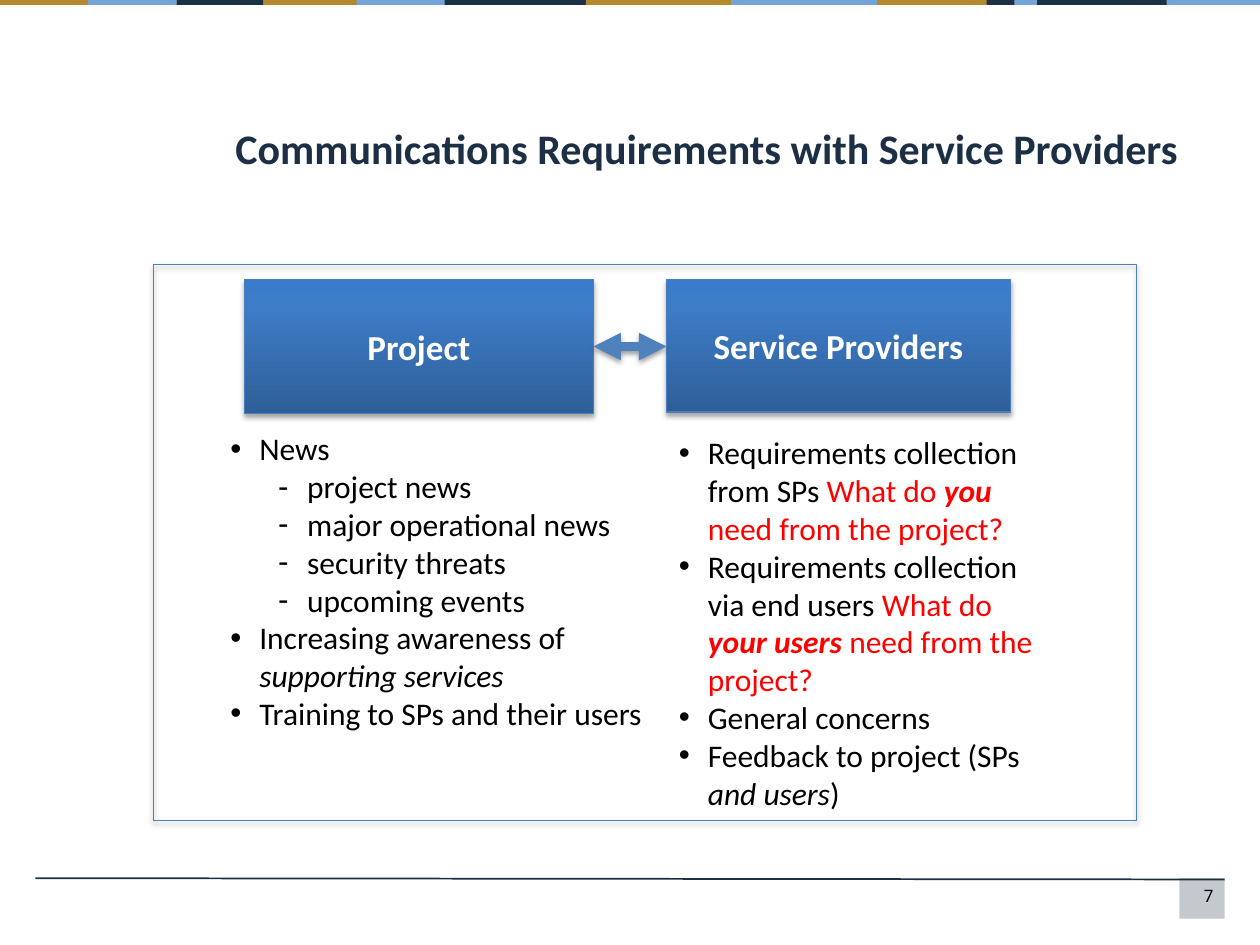
"""Build the slide on communications requirements with service providers."""
import copy
from dataclasses import dataclass
from typing import Optional

import pptx
import pptx.dml.color
import pptx.enum.shapes
import pptx.enum.text
import pptx.oxml
import pptx.oxml.ns
import pptx.util
from pptx.dml.color import RGBColor
from pptx.util import Inches, Pt

NAVY = RGBColor(0x1C, 0x30, 0x46)
INK = RGBColor(0x1D, 0x2F, 0x45)
GOLD = RGBColor(0xB5, 0x89, 0x2D)
SKY = RGBColor(0x75, 0xA5, 0xD8)
EDGE = RGBColor(0x4B, 0x7E, 0xBC)
ARROW = RGBColor(0x4F, 0x81, 0xBD)
BLACK = RGBColor(0, 0, 0)
WHITE = RGBColor(0xFF, 0xFF, 0xFF)
RED = RGBColor(0xFF, 0, 0)
GRADIENT = [
    (0, RGBColor(0x2F, 0x5F, 0x99)),
    (0.8, RGBColor(0x3D, 0x7C, 0xC7)),
    (1, RGBColor(0x3A, 0x7C, 0xCB)),
]
RECT = pptx.enum.shapes.MSO_SHAPE.RECTANGLE
STRAIGHT = pptx.enum.shapes.MSO_CONNECTOR.STRAIGHT
ALIGN = pptx.enum.text.PP_ALIGN
MIDDLE = pptx.enum.text.MSO_ANCHOR.MIDDLE
BREAK = "\n"


@dataclass
class Box:
    left: float
    top: float
    width: float
    height: float

    def emu(self) -> list:
        return [Inches(v) for v in (self.left, self.top, self.width, self.height)]


@dataclass
class Span:
    text: str
    color: RGBColor = BLACK
    bold: bool = False
    italic: bool = False
    size: float = 18
    font: str = "Calibri"


@dataclass
class Item:
    spans: list
    level: int = 0


STRIPES = [
    (3.41, 1.24, NAVY), (6.5, 3.46, GOLD), (9.19, 0.81, SKY), (2.09, 1.11, GOLD),
    (7.83, 1.43, NAVY), (5.71, 1.25, SKY), (1.4, 0.69, NAVY), (0.7, 0.7, SKY),
    (2.83, 0.7, SKY), (4.65, 1.15, GOLD), (8.05, 0.18, SKY), (0, 0.7, GOLD),
]
PARTIES = [
    ("Project", Box(1.94, 2.22, 2.77, 1.06)),
    ("Service Providers", Box(5.29, 2.22, 2.73, 1.05)),
]
NEWS = ["project news", "major operational news", "security threats", "upcoming events"]
PROVIDER_ITEMS = [
    Item([Span("Requirements collection from SPs "), Span("What do ", RED),
          Span("you", RED, True, True), Span(" need from the project?", RED)]),
    Item([Span("Requirements collection via end users "), Span("What do ", RED),
          Span("your users ", RED, True, True), Span("need from the project?", RED)]),
    Item([Span("General concerns")]),
    Item([Span("Feedback to project (SPs "), Span(BREAK),
          Span("and users", italic=True), Span(")")]),
]
PROJECT_ITEMS = [
    Item([Span("News")]),
    *[Item([Span(text)], 1) for text in NEWS],
    Item([Span("Increasing awareness of "), Span("supporting services", italic=True)]),
    Item([Span("Training to SPs and their users")]),
]


def add_spans(p, spans: list) -> None:
    for span in spans:
        if span.text == BREAK:
            p.add_line_break()
            continue
        r = p.add_run()
        r.text = span.text
        r.font.name = span.font
        r.font.size = Pt(span.size)
        r.font.bold = span.bold
        r.font.italic = span.italic
        r.font.color.rgb = span.color


def add_effects(sp, alpha: int = 0, dist: float = 0) -> None:
    """Replace the theme shadow with a downward one, or with none."""
    shadow = (
        f'<a:outerShdw blurRad="{Pt(3.1)}" dist="{Pt(dist)}" dir="5400000" rotWithShape="0">'
        f'<a:srgbClr val="000000"><a:alpha val="{alpha * 1000}"/></a:srgbClr></a:outerShdw>'
    ) if alpha else ""
    ns = pptx.oxml.ns.nsdecls("a")
    sp._element.spPr.append(
        pptx.oxml.parse_xml(f"<a:effectLst {ns}>{shadow}</a:effectLst>"))


def add_rect(s, box: Box, fill: Optional[RGBColor] = None, outlined: bool = False):
    sp = s.shapes.add_shape(RECT, *box.emu())
    if fill is None:
        sp.fill.background()
    else:
        sp.fill.solid()
        sp.fill.fore_color.rgb = fill
    if outlined:
        sp.line.color.rgb = EDGE
        sp.line.width = Pt(0.75)
        add_effects(sp, 35, 1.8)
    else:
        sp.line.fill.background()
        sp.shadow.inherit = False
    return sp


def add_party(s, name: str, box: Box) -> None:
    sp = add_rect(s, box, EDGE, outlined=True)
    sp.fill.gradient()
    sp.fill.gradient_angle = 90
    stops = sp._element.spPr.find(".//" + pptx.oxml.ns.qn("a:gsLst"))
    stops.append(copy.deepcopy(stops[-1]))
    for stop, (position, color) in zip(sp.fill.gradient_stops, GRADIENT):
        stop.position = position
        stop.color.rgb = color
    tf = sp.text_frame
    tf.vertical_anchor = MIDDLE
    p = tf.paragraphs[0]
    p.alignment = ALIGN.CENTER
    add_spans(p, [Span(name, WHITE, True, size=20)])


def add_line(s, start: tuple, end: tuple, color: RGBColor, width: float):
    sp = s.shapes.add_connector(STRAIGHT, *[Inches(v) for v in (*start, *end)])
    sp.line.color.rgb = color
    sp.line.width = Pt(width)
    return sp


def add_text(s, box: Box):
    tf = s.shapes.add_textbox(*box.emu()).text_frame
    tf.word_wrap = True
    return tf


def add_list(s, box: Box, items: list) -> None:
    tf = add_text(s, box)
    tf.auto_size = pptx.enum.text.MSO_AUTO_SIZE.SHAPE_TO_FIT_TEXT
    for i, item in enumerate(items):
        p = tf.add_paragraph() if i else tf.paragraphs[0]
        p.level = item.level
        pPr = p._p.get_or_add_pPr()
        pPr.set("marL", str(Inches(0.61 if item.level else 0.23)))
        pPr.set("indent", str(Inches(-0.23)))
        for tag, key, value in (("buFont", "typeface", "Arial"),
                                ("buChar", "char", "-" if item.level else "•")):
            pptx.oxml.ns.qn("a:" + tag)
            pPr.append(pptx.oxml.parse_xml(
                f'<a:{tag} {pptx.oxml.ns.nsdecls("a")} {key}="{value}"/>'))
        add_spans(p, item.spans)


def main() -> None:
    prs = pptx.Presentation()
    prs.slide_width, prs.slide_height = Inches(10), Inches(7.5)
    s = prs.slides.add_slide(prs.slide_layouts[6])

    badge = add_rect(s, Box(9.36, 6.97, 0.36, 0.32), INK)
    color = badge._element.spPr.find(".//" + pptx.oxml.ns.qn("a:srgbClr"))
    color.append(pptx.oxml.parse_xml(
        f'<a:alpha {pptx.oxml.ns.nsdecls("a")} val="26000"/>'))
    for left, width, fill in STRIPES:
        add_rect(s, Box(left, 0, width, 0.04), fill)
    add_effects(add_line(s, (9.72, 6.98), (0.28, 6.97), INK, 1))
    p = add_text(s, Box(7.17, 6.98, 2.56, 0.31)).paragraphs[0]
    p.alignment = ALIGN.RIGHT
    add_spans(p, [Span("7", size=9.8, font="Roboto")])

    tf = add_text(s, Box(1.77, 1.1, 7.95, 0.44))
    tf.vertical_anchor = MIDDLE
    title = "Communications Requirements with Service Providers"
    add_spans(tf.paragraphs[0], [Span(title, INK, True, size=24), Span(BREAK)])

    for name, box in PARTIES:
        add_party(s, name, box)
    arrow = add_line(s, (4.71, 2.75), (5.29, 2.75), ARROW, 5.25)
    for end in ("headEnd", "tailEnd"):
        arrow.line._get_or_add_ln().append(pptx.oxml.parse_xml(
            f'<a:{end} {pptx.oxml.ns.nsdecls("a")} type="triangle"/>'))
    add_effects(arrow, 38, 1.6)
    add_list(s, Box(5.29, 3.39, 3.17, 3.4), PROVIDER_ITEMS)
    add_list(s, Box(1.73, 3.36, 3.93, 3.06), PROJECT_ITEMS)
    add_rect(s, Box(1.22, 2.1, 7.8, 4.41), outlined=True)
    prs.save("out.pptx")


if __name__ == "__main__":
    main()
